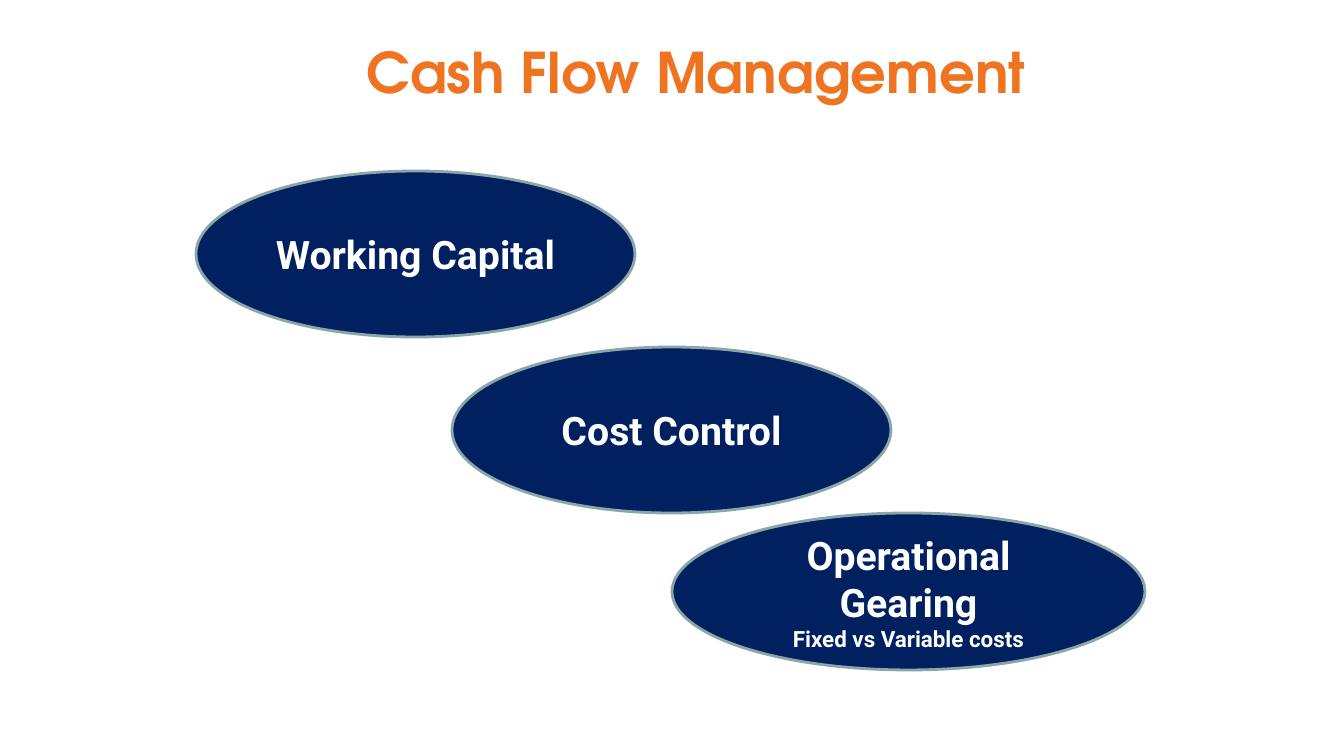
from dataclasses import dataclass

from pptx import Presentation
from pptx.dml.color import RGBColor
from pptx.enum.shapes import MSO_SHAPE
from pptx.enum.text import MSO_ANCHOR, PP_ALIGN
from pptx.util import Pt

SCALE = 12192000 / 1344


@dataclass(frozen=True)
class Theme:
    orange: str = "EE7421"
    navy: str = "002060"
    edge: str = "8AA6A8"
    white: str = "FFFFFF"
    head_face: str = "TeX Gyre Adventor"
    body_face: str = "Roboto"
    head_size: int = 40
    main_size: int = 28
    note_size: int = 16
    edge_width: int = 2


THEME = Theme()

OVALS = [
    ((196, 171, 439, 166), ["Working Capital"]),
    ((452, 347, 439, 166), ["Cost Control"]),
    ((672, 513, 473, 157), ["Operational Gearing", "Fixed vs Variable costs"]),
]


def px(*nums):
    return [round(num * SCALE) for num in nums]


def set_all(item, values):
    for name, value in values.items():
        setattr(item, name, value)


def write(frame, lines, face, color):
    """Fill a frame with centred bold lines, given as (text, size) pairs."""
    set_all(frame, {"word_wrap": True, "vertical_anchor": MSO_ANCHOR.MIDDLE})
    for index, (text, size) in enumerate(lines):
        para = frame.add_paragraph() if index else frame.paragraphs[0]
        para.alignment = PP_ALIGN.CENTER
        run = para.add_run()
        run.text = text
        set_all(run.font, {"name": face, "size": Pt(size), "bold": True})
        run.font.color.rgb = RGBColor.from_string(color)


def add_title(slide, box, text):
    frame = slide.shapes.add_textbox(*px(*box)).text_frame
    sides = ("left", "top", "right", "bottom")
    set_all(frame, {f"margin_{side}": 0 for side in sides})
    write(frame, [(text, THEME.head_size)], THEME.head_face, THEME.orange)


def add_oval(slide, box, texts):
    oval = slide.shapes.add_shape(MSO_SHAPE.OVAL, *px(*box))
    oval.shadow.inherit = False
    oval.fill.solid()
    oval.fill.fore_color.rgb = RGBColor.from_string(THEME.navy)
    oval.line.color.rgb = RGBColor.from_string(THEME.edge)
    oval.line.width = Pt(THEME.edge_width)
    lines = zip(texts, (THEME.main_size, THEME.note_size))
    write(oval.text_frame, lines, THEME.body_face, THEME.white)


def main():
    deck = Presentation()
    wide, high = px(1344, 756)
    set_all(deck, {"slide_width": wide, "slide_height": high})
    slide = deck.slides.add_slide(deck.slide_layouts[6])
    add_title(slide, (126, 0, 1140, 143), "Cash Flow Management")
    for box, texts in OVALS:
        add_oval(slide, box, texts)
    deck.save("out.pptx")


if __name__ == "__main__":
    main()
